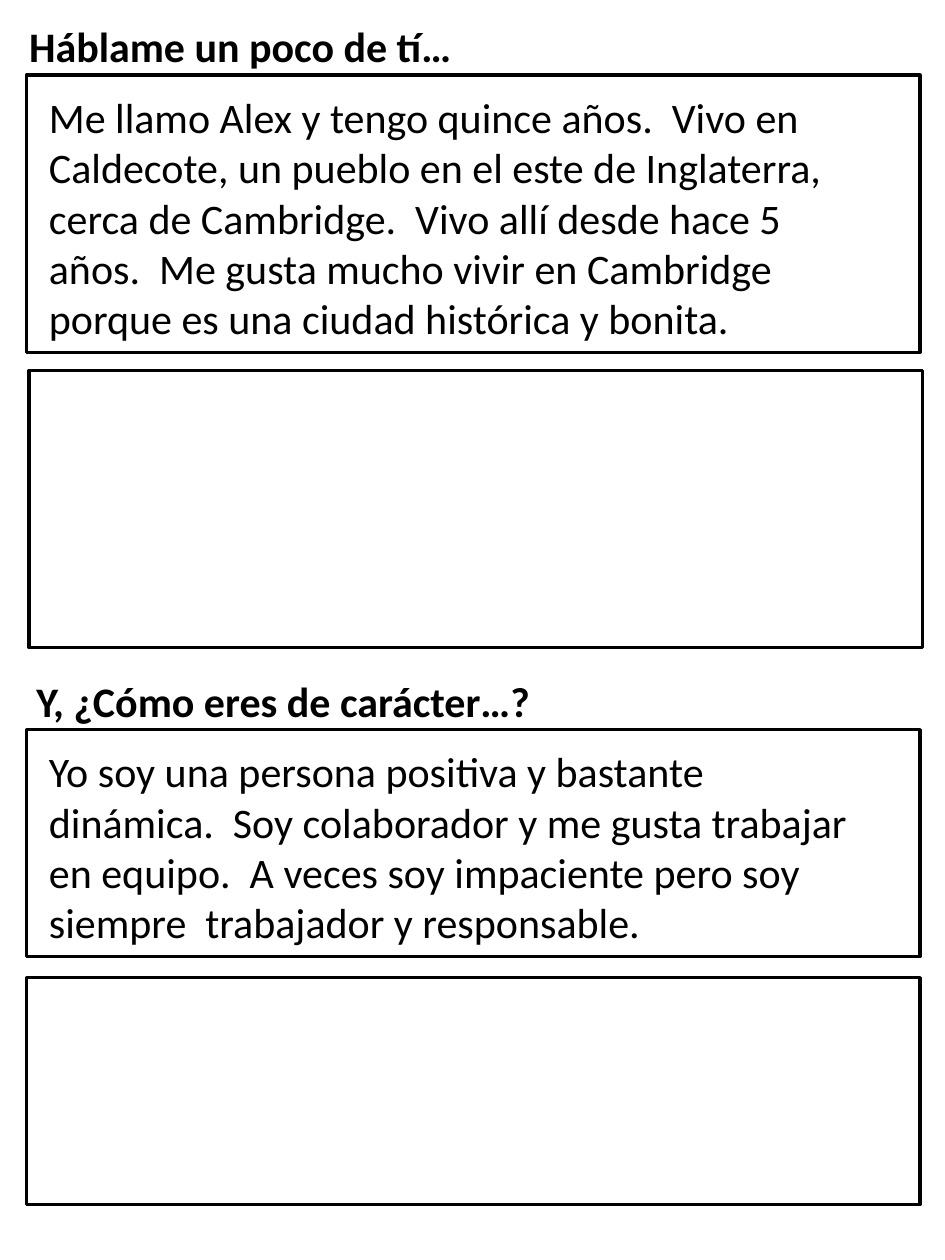
from pptx import Presentation
from pptx.dml.color import RGBColor
from pptx.enum.shapes import MSO_SHAPE
from pptx.enum.text import MSO_ANCHOR, MSO_AUTO_SIZE, PP_ALIGN
from pptx.util import Pt

RECTANGLE = MSO_SHAPE.RECTANGLE
TOP = MSO_ANCHOR.TOP
LEFT = PP_ALIGN.LEFT
NO_FIT = MSO_AUTO_SIZE.NONE
GROW = MSO_AUTO_SIZE.SHAPE_TO_FIT_TEXT
TITLE_ONLY = 5

FRAME_LEFT, FRAME_WIDTH = 15.1, 510.5
ANSWER_LEFT, ANSWER_WIDTH = 20.9, 487.4
HEADING_WIDTH, HEADING_HEIGHT = 516.2, 36


def color(hex_value):
    return RGBColor.from_string(hex_value)


class Worksheet:
    font = "Calibri"
    size = 24
    ink = "000000"
    line_width = 2

    def __init__(self, slide):
        self.slide = slide

    def style_text(self, frame, text, bold, fit):
        frame.word_wrap = True
        frame.auto_size = fit
        frame.vertical_anchor = TOP
        frame.text = text
        paragraph = frame.paragraphs[0]
        paragraph.alignment = LEFT
        font = paragraph.runs[0].font
        font.name = self.font
        font.size = Pt(self.size)
        font.bold = bold
        font.color.rgb = color(self.ink)

    def title(self, text, left, top, width, height):
        heading = self.slide.shapes.title
        heading.left, heading.top = Pt(left), Pt(top)
        heading.width, heading.height = Pt(width), Pt(height)
        self.style_text(heading.text_frame, text, True, NO_FIT)

    def text(self, text, left, top, width, height, bold=False):
        passage = self.slide.shapes.add_textbox(Pt(left), Pt(top), Pt(width), Pt(height))
        self.style_text(passage.text_frame, text, bold, GROW)

    def frame(self, left, top, width, height):
        border = self.slide.shapes.add_shape(RECTANGLE, Pt(left), Pt(top), Pt(width), Pt(height))
        border.shadow.inherit = False
        border.fill.background()
        border.line.color.rgb = color(self.ink)
        border.line.width = Pt(self.line_width)

    def question(self, answer, model_top, blank_left, blank_top, height):
        inset = 5.6
        self.frame(FRAME_LEFT, model_top, FRAME_WIDTH, height)
        self.text(answer, ANSWER_LEFT, model_top + inset, ANSWER_WIDTH, height - inset)
        self.frame(blank_left, blank_top, FRAME_WIDTH, height)


def main():
    deck = Presentation()
    deck.slide_width, deck.slide_height = Pt(540), Pt(720)
    sheet = Worksheet(deck.slides.add_slide(deck.slide_layouts[TITLE_ONLY]))

    sheet.title("Háblame un poco de tí…", 9.4, 7.9, HEADING_WIDTH, HEADING_HEIGHT)
    sheet.question(
        "Me llamo Alex y tengo quince años.  Vivo en Caldecote, un pueblo en el este "
        "de Inglaterra, cerca de Cambridge.  Vivo allí desde hace 5 años.  Me gusta "
        "mucho vivir en Cambridge porque es una ciudad histórica y bonita.",
        43, 16.6, 211.7, 158.4)

    sheet.text("Y, ¿Cómo eres de carácter…?", 13.7, 382.3, HEADING_WIDTH, HEADING_HEIGHT, bold=True)
    sheet.question(
        "Yo soy una persona positiva y bastante dinámica.  Soy colaborador y me gusta "
        "trabajar en equipo.  A veces soy impaciente pero soy siempre  trabajador y "
        "responsable.",
        417, FRAME_LEFT, 558.7, 129.6)

    deck.save("out.pptx")


if __name__ == "__main__":
    main()
